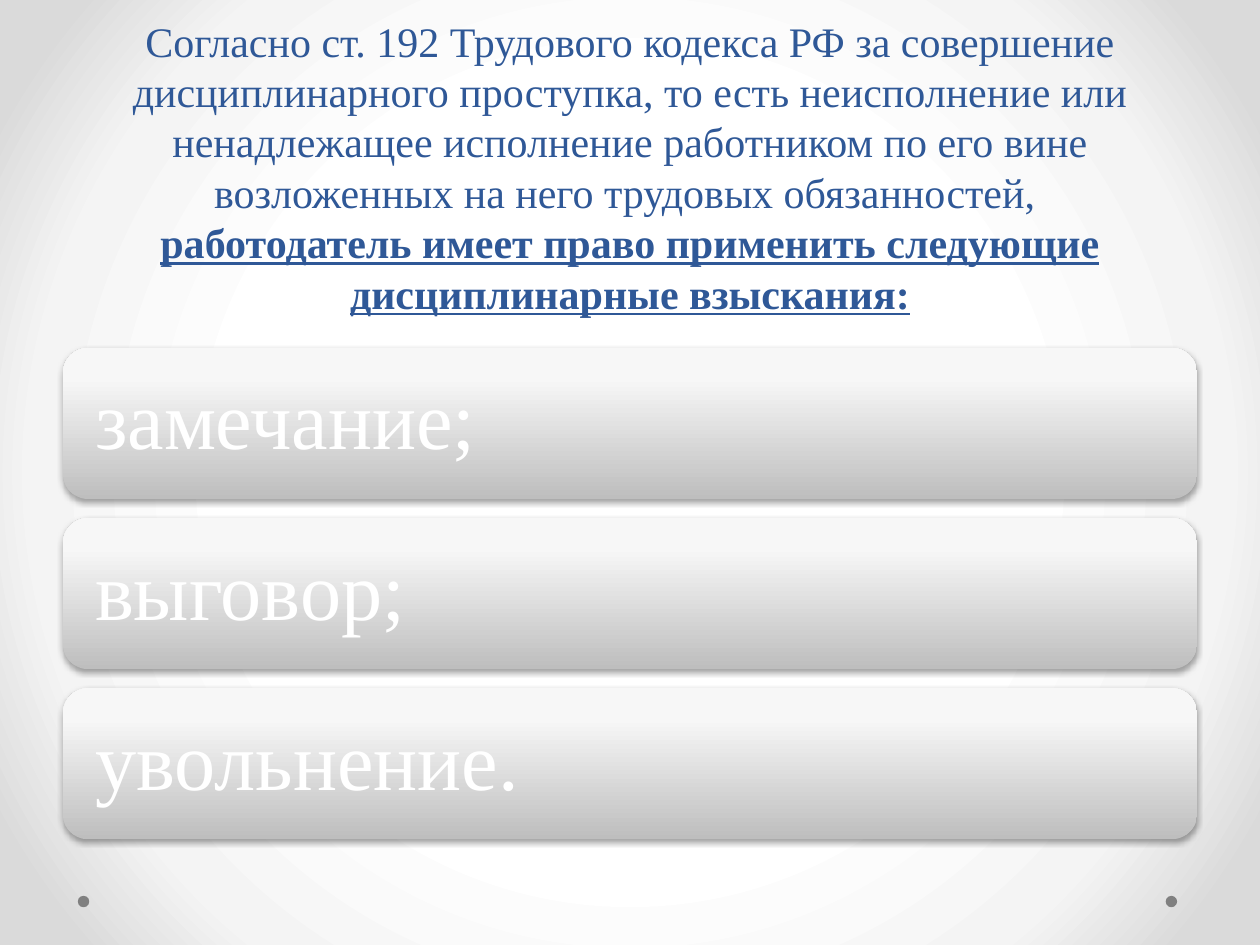
from lxml.etree import SubElement
from pptx import Presentation
from pptx.dml.color import RGBColor
from pptx.enum.shapes import MSO_SHAPE
from pptx.enum.text import MSO_ANCHOR, MSO_AUTO_SIZE, PP_ALIGN
from pptx.oxml.ns import qn
from pptx.util import Cm, Pt

BLUE = RGBColor(0x2F, 0x58, 0x97)
WHITE = RGBColor(0xFF, 0xFF, 0xFF)
PALE = RGBColor(0xF4, 0xF4, 0xF4)
EDGE = RGBColor(0xDA, 0xDA, 0xDA)
DOT = RGBColor(0x80, 0x80, 0x80)
BAR_STOPS = [
    (0, RGBColor(0xBE, 0xBE, 0xBE)),
    (80, RGBColor(0xF7, 0xF7, 0xF7)),
    (100, RGBColor(0xF8, 0xF8, 0xF8)),
]
BACKGROUND_STOPS = [(50, WHITE), (76, PALE), (92, EDGE)]

BASIS = "Согласно ст. 192 Трудового кодекса РФ за совершение дисциплинарного проступка, то есть неисполнение или ненадлежащее исполнение работником по его вине возложенных на него трудовых обязанностей, "
RIGHT = "работодатель имеет право применить следующие дисциплинарные взыскания:"
PENALTIES = ["замечание;", "выговор;", "увольнение."]


def fill_gradient(fill, owner, stops, radial=False):
    """Give the fill found inside owner any number of (percent, colour) stops."""
    fill.gradient()
    gradient = next(owner.iter(qn("a:gradFill")))
    for child in list(gradient):
        gradient.remove(child)
    stop_list = SubElement(gradient, qn("a:gsLst"))
    for percent, color in stops:
        stop = SubElement(stop_list, qn("a:gs"), pos=str(percent * 1000))
        SubElement(stop, qn("a:srgbClr"), val=str(color))
    if radial:
        path = SubElement(gradient, qn("a:path"), path="circle")
        SubElement(path, qn("a:fillToRect"), l="50000", t="50000", r="50000", b="50000")
    else:
        SubElement(gradient, qn("a:lin"), ang="16200000", scaled="0")


class PenaltySlide:
    font = "Times New Roman"

    def __init__(self, presentation):
        self.slide = presentation.slides.add_slide(presentation.slide_layouts[5])

    def background(self):
        fill_gradient(self.slide.background.fill, self.slide.element, BACKGROUND_STOPS, radial=True)

    def run(self, paragraph, text, size, color, strong=False):
        run = paragraph.add_run()
        run.text = text
        run.font.name = self.font
        run.font.size = Pt(size)
        run.font.color.rgb = color
        run.font.bold = run.font.underline = strong

    def title(self, plain, strong):
        title = self.slide.shapes.title
        title.left, title.top, title.width, title.height = Cm(1.27), Cm(0), Cm(22.86), Cm(6.53)
        frame = title.text_frame
        frame.word_wrap = True
        frame.auto_size = MSO_AUTO_SIZE.NONE
        frame.vertical_anchor = MSO_ANCHOR.BOTTOM
        paragraph = frame.paragraphs[0]
        paragraph.alignment = PP_ALIGN.CENTER
        paragraph.line_spacing = Pt(28.8)
        self.run(paragraph, plain, 24, BLUE)
        paragraph.add_line_break()
        self.run(paragraph, strong, 24, BLUE, strong=True)

    def shape(self, kind, left, top, width, height):
        shape = self.slide.shapes.add_shape(kind, Cm(left), Cm(top), Cm(width), Cm(height))
        shape.shadow.inherit = False
        shape.line.fill.background()
        return shape

    def dot(self, left):
        dot = self.shape(MSO_SHAPE.OVAL, left, 18.06, 0.23, 0.23)
        dot.fill.solid()
        dot.fill.fore_color.rgb = DOT

    def bar(self, top, text):
        bar = self.shape(MSO_SHAPE.ROUNDED_RECTANGLE, 1.27, top, 22.86, 3.05)
        fill_gradient(bar.fill, bar.element.spPr, BAR_STOPS)
        self.drop_shadow(bar)
        frame = bar.text_frame
        frame.word_wrap = True
        frame.vertical_anchor = MSO_ANCHOR.MIDDLE
        frame.margin_left = frame.margin_right = Cm(0.5)
        paragraph = frame.paragraphs[0]
        paragraph.alignment = PP_ALIGN.LEFT
        paragraph.line_spacing = 0.9
        self.run(paragraph, text, 47, WHITE)

    def drop_shadow(self, shape):
        effects = shape.element.spPr.find(qn("a:effectLst"))
        shadow = SubElement(
            effects, qn("a:outerShdw"), blurRad=str(Pt(3.1)), dist=str(Pt(1.8)),
            dir="5400000", algn="ctr", rotWithShape="0",
        )
        color = SubElement(shadow, qn("a:srgbClr"), val="000000")
        SubElement(color, qn("a:alpha"), val="35000")


def main():
    presentation = Presentation()
    presentation.slide_width, presentation.slide_height = Cm(25.4), Cm(19.05)
    page = PenaltySlide(presentation)
    page.background()
    for left in (23.5, 1.57):
        page.dot(left)
    page.title(BASIS, RIGHT)
    for index, penalty in enumerate(PENALTIES):
        page.bar(7.01 + index * 3.43, penalty)
    presentation.save("out.pptx")


if __name__ == "__main__":
    main()
